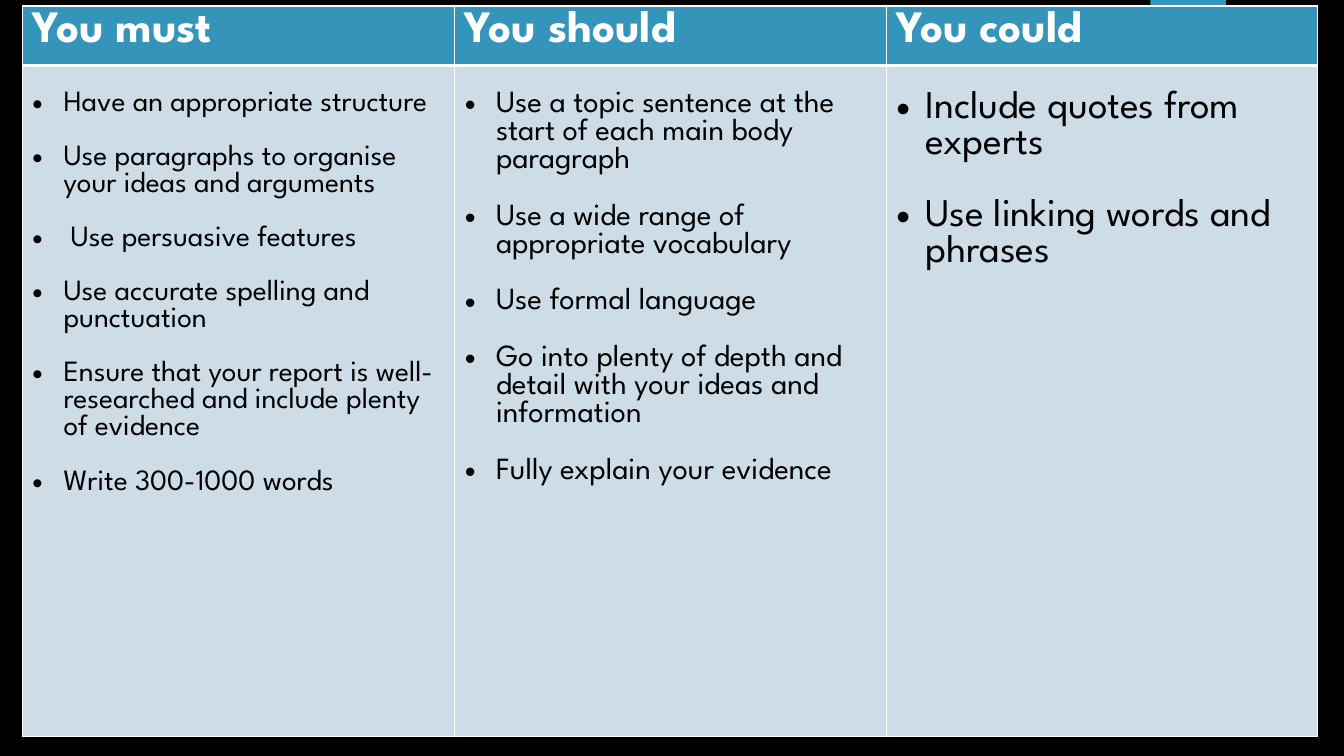
"""Build a slide with a three-column table of must, should and could criteria."""
from dataclasses import dataclass

from lxml import etree
from pptx import Presentation
from pptx.dml.color import RGBColor
from pptx.enum.shapes import MSO_SHAPE
from pptx.oxml.ns import qn
from pptx.util import Inches, Pt

RECTANGLE = MSO_SHAPE.RECTANGLE
FONT = "League Spartan"
LINE_HEIGHT = 0.92
COLOURS = {
    "background": "000000",
    "accent": "3494BA",
    "panel": "CEDCE7",
    "border": "FFFFFF",
    "heading": "FFFFFF",
    "body": "000000",
}


@dataclass(frozen=True)
class Item:
    text: str
    indent: float = 0.31


@dataclass(frozen=True)
class Column:
    heading: str
    width: float
    size: int
    items: tuple[Item, ...]


COLUMNS = (
    Column("You must", 4.29, 21, (
        Item("Have an appropriate structure"),
        Item("Use paragraphs to organise your ideas and arguments"),
        Item("Use persuasive features", 0.38),
        Item("Use accurate spelling and punctuation"),
        Item("Ensure that your report is well-researched and include plenty of evidence"),
        Item("Write 300-1000 words"),
    )),
    Column("You should", 4.28, 22, (
        Item("Use a topic sentence at the start of each main body paragraph"),
        Item("Use a wide range of appropriate vocabulary"),
        Item("Use formal language"),
        Item("Go into plenty of depth and detail with your ideas and information"),
        Item("Fully explain your evidence"),
    )),
    Column("You could", 4.28, 28, (
        Item("Include quotes from experts", 0.29),
        Item("Use linking words and phrases", 0.29),
    )),
)


def colour(name: str) -> RGBColor:
    return RGBColor.from_string(COLOURS[name])


def write(para, text: str, *, size: int, color: str, bold: bool = False) -> None:
    span = para.add_run()
    span.text = text
    span.font.name = FONT
    span.font.size = Pt(size)
    span.font.bold = bold
    span.font.color.rgb = colour(color)


def add_bullet(para, indent: float) -> None:
    properties = para._p.get_or_add_pPr()
    properties.set("marL", str(Inches(indent)))
    properties.set("indent", str(-Inches(indent)))
    etree.SubElement(properties, qn("a:buFont"), typeface="Arial")
    etree.SubElement(properties, qn("a:buChar"), char="•")


def style_cell(cell, fill: str, *, top: int = 1, bottom: int = 1) -> None:
    properties = cell._tc.get_or_add_tcPr()
    for tag, width in (("lnL", 1), ("lnR", 1), ("lnT", top), ("lnB", bottom)):
        line = etree.SubElement(properties, qn(f"a:{tag}"), w=str(Pt(width)))
        solid = etree.SubElement(line, qn("a:solidFill"))
        etree.SubElement(solid, qn("a:srgbClr"), val=COLOURS["border"])
    cell.fill.solid()
    cell.fill.fore_color.rgb = colour(fill)


def fill_column(table, index: int, column: Column) -> None:
    table.columns[index].width = Inches(column.width)
    head, body = table.cell(0, index), table.cell(1, index)
    style_cell(head, "accent", bottom=3)
    write(head.text_frame.paragraphs[0], column.heading,
          size=32, color="heading", bold=True)

    style_cell(body, "panel", top=3)
    body.margin_top = Inches(0.25)
    frame = body.text_frame
    for position, item in enumerate(column.items):
        para = frame.add_paragraph() if position else frame.paragraphs[0]
        add_bullet(para, item.indent)
        if position:
            para.space_before = Pt(column.size * LINE_HEIGHT)
        write(para, item.text, size=column.size, color="body")


def main() -> None:
    deck = Presentation()
    deck.slide_width, deck.slide_height = Inches(13.33), Inches(7.5)
    page = deck.slides.add_slide(deck.slide_layouts[6])
    page.background.fill.solid()
    page.background.fill.fore_color.rgb = colour("background")

    tab = page.shapes.add_shape(
        RECTANGLE, Inches(11.41), 0, Inches(0.75), Inches(1.25))
    tab.shadow.inherit = False
    tab.fill.solid()
    tab.fill.fore_color.rgb = colour("accent")
    tab.line.fill.background()

    table = page.shapes.add_table(
        2, len(COLUMNS), Inches(0.22), Inches(0.06), Inches(12.85), Inches(7.25)).table
    table.horz_banding = False
    for row, height in zip(table.rows, (0.59, 6.66)):
        row.height = Inches(height)
    for index, column in enumerate(COLUMNS):
        fill_column(table, index, column)
    deck.save("out.pptx")


if __name__ == "__main__":
    main()
